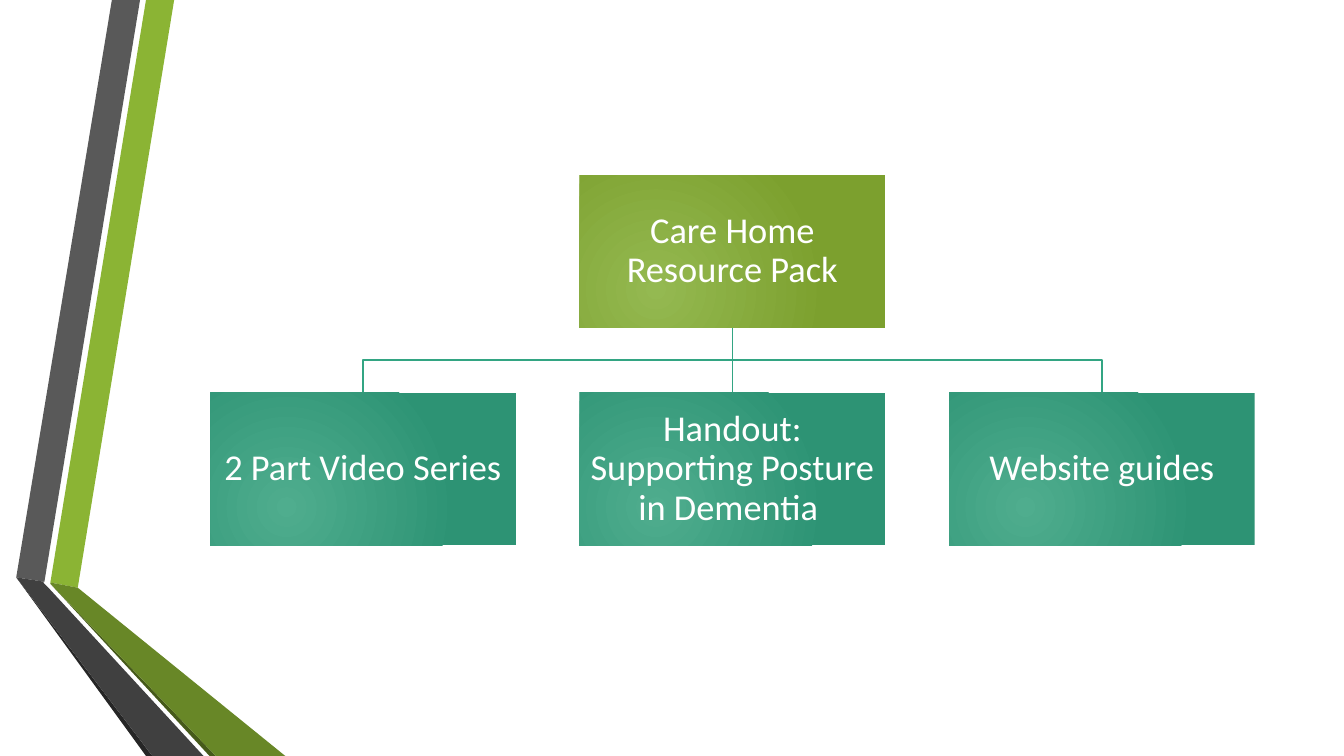
from lxml import etree
from pptx import Presentation
from pptx.dml.color import RGBColor
from pptx.enum.shapes import MSO_CONNECTOR, MSO_SHAPE
from pptx.enum.text import MSO_ANCHOR, PP_ALIGN
from pptx.oxml.ns import qn
from pptx.util import Cm, Pt

STRAIGHT = MSO_CONNECTOR.STRAIGHT
RECTANGLE = MSO_SHAPE.RECTANGLE
MIDDLE = MSO_ANCHOR.MIDDLE
CENTER = PP_ALIGN.CENTER

SLIDE_WIDTH, SLIDE_HEIGHT = 33.87, 19.05
BLANK_LAYOUT = 6

# Lengths in centimetres
BOX_WIDTH, BOX_HEIGHT = 7.7, 3.84
FIRST_LEFT, COLUMN_STEP = 5.3, 9.31
ROOT_TOP, CHILD_TOP = 4.42, 9.9

ROOT_GRADIENT = ("94B951", "7CA02E")
CHILD_GRADIENT = ("4FAD8E", "2D9374")
LINE_COLOR = "33A583"
CHILDREN = (
    "2 Part Video Series",
    "Handout: Supporting Posture in Dementia ",
    "Website guides",
)

RIBBONS = (
    ("8BB434", [(1.27, 14.68), (1.96, 14.81), (4.39, 0), (3.68, 0)]),
    ("595959", [(3.53, 0), (2.82, 0), (0.41, 14.55), (1.12, 14.66)]),
    ("262626", [(0.41, 14.55), (3.68, SLIDE_HEIGHT), (3.84, SLIDE_HEIGHT)]),
    ("465A1A", [(1.27, 14.71), (5.28, SLIDE_HEIGHT), (5.44, SLIDE_HEIGHT)]),
    ("688727", [(1.27, 14.71), (5.44, SLIDE_HEIGHT), (7.19, SLIDE_HEIGHT),
                (1.96, 14.81), (1.27, 14.68)]),
    ("404040", [(5.13, SLIDE_HEIGHT), (1.22, 14.81), (1.09, 14.68),
                (1.12, 14.66), (0.41, 14.55), (3.84, SLIDE_HEIGHT)]),
)


def color(hex_string):
    return RGBColor.from_string(hex_string)


def style_line(shape):
    shape.line.color.rgb = color(LINE_COLOR)
    shape.line.width = Pt(1.25)


def add_outline(slide, points, closed):
    points = [(Cm(x), Cm(y)) for x, y in points]
    builder = slide.shapes.build_freeform(*points[0], scale=1.0)
    builder.add_line_segments(points[1:], close=closed)
    shape = builder.convert_to_shape()
    shape.shadow.inherit = False
    return shape


def add_ribbon(slide, fill_color, points):
    ribbon = add_outline(slide, points, closed=True)
    ribbon.fill.solid()
    ribbon.fill.fore_color.rgb = color(fill_color)
    ribbon.line.fill.background()


def add_branch(slide, start, end):
    """Link two points, with a bend halfway down if they are not aligned."""
    (start_x, start_y), (end_x, end_y) = start, end
    if start_x == end_x:
        branch = slide.shapes.add_connector(
            STRAIGHT, Cm(start_x), Cm(start_y), Cm(end_x), Cm(end_y))
        etree.SubElement(branch.element.spPr, qn("a:effectLst"))
    else:
        bend_y = (start_y + end_y) / 2
        corners = [start, (start_x, bend_y), (end_x, bend_y), end]
        branch = add_outline(slide, corners, closed=False)
        branch.fill.background()
    style_line(branch)


def fill_radial(shape, colors):
    """Fill with a circular gradient centred in the lower left."""
    shape.fill.gradient()
    for stop, position, hex_string in zip(shape.fill.gradient_stops, (0, 1), colors):
        stop.position = position
        stop.color.rgb = color(hex_string)
    gradient = shape.element.spPr.find(qn("a:gradFill"))
    gradient.remove(gradient.find(qn("a:lin")))
    circle = etree.SubElement(gradient, qn("a:path"), {"path": "circle"})
    etree.SubElement(circle, qn("a:fillToRect"),
                     {"l": "50000", "t": "100000", "r": "100000", "b": "50000"})


def add_box(slide, left, top, text, colors):
    box = slide.shapes.add_shape(
        RECTANGLE, Cm(left), Cm(top), Cm(BOX_WIDTH), Cm(BOX_HEIGHT))
    box.shadow.inherit = False
    box.line.fill.background()
    fill_radial(box, colors)

    frame = box.text_frame
    frame.text = text
    frame.word_wrap = True
    frame.vertical_anchor = MIDDLE
    frame.margin_left = frame.margin_right = Cm(0.05)
    frame.margin_top = frame.margin_bottom = Cm(0.05)
    paragraph = frame.paragraphs[0]
    paragraph.alignment = CENTER
    paragraph.line_spacing = 0.9
    font = paragraph.runs[0].font
    font.name = "Calibri"
    font.size = Pt(26)
    font.color.rgb = color("FFFFFF")


def main():
    presentation = Presentation()
    presentation.slide_width = Cm(SLIDE_WIDTH)
    presentation.slide_height = Cm(SLIDE_HEIGHT)
    slide = presentation.slides.add_slide(presentation.slide_layouts[BLANK_LAYOUT])

    for fill_color, points in RIBBONS:
        add_ribbon(slide, fill_color, points)

    lefts = [FIRST_LEFT + column * COLUMN_STEP for column in range(len(CHILDREN))]
    root_left = lefts[1]
    root_foot = (root_left + BOX_WIDTH / 2, ROOT_TOP + BOX_HEIGHT)
    for left in lefts:
        add_branch(slide, root_foot, (left + BOX_WIDTH / 2, CHILD_TOP))

    add_box(slide, root_left, ROOT_TOP, "Care Home Resource Pack", ROOT_GRADIENT)
    for left, text in zip(lefts, CHILDREN):
        add_box(slide, left, CHILD_TOP, text, CHILD_GRADIENT)

    presentation.save("out.pptx")


if __name__ == "__main__":
    main()
